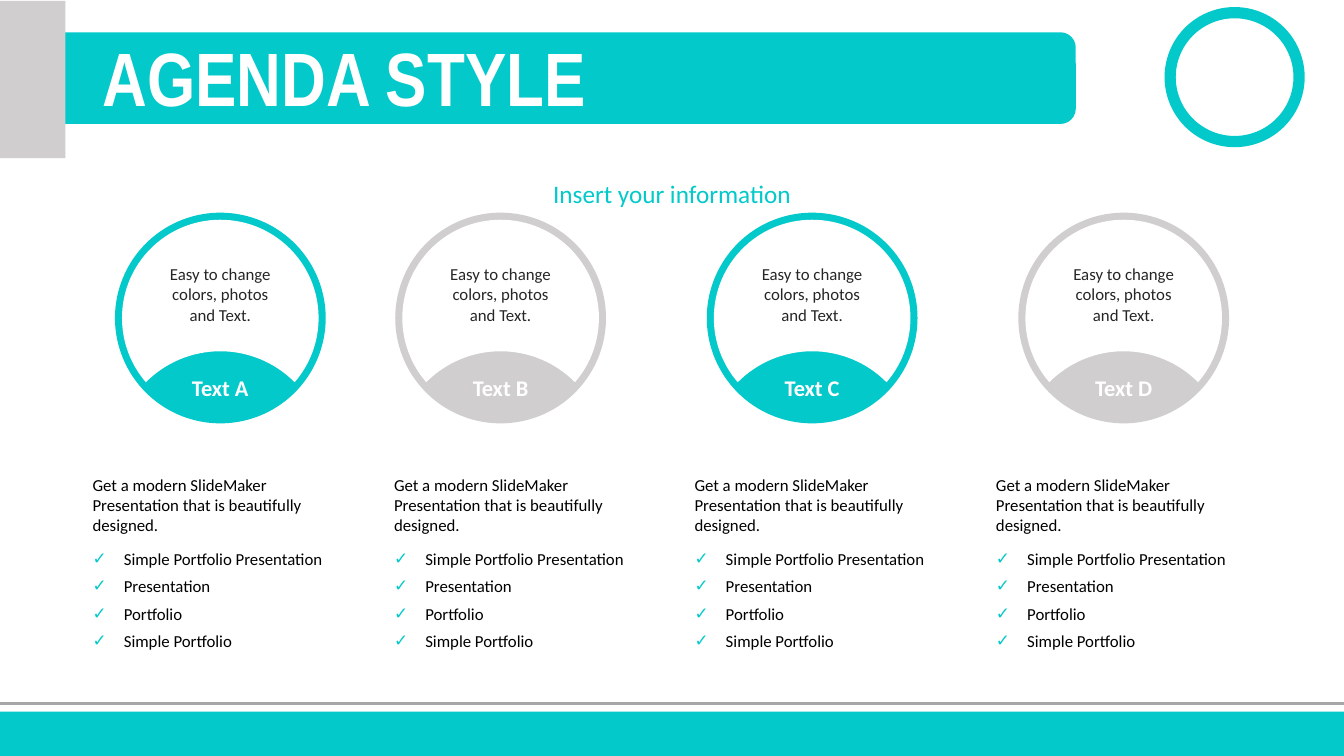
import dataclasses
import math

import lxml.etree
import pptx
import pptx.dml.color
import pptx.enum.shapes
import pptx.enum.text
import pptx.oxml.ns
import pptx.shapes.autoshape
import pptx.util

SHAPE = pptx.enum.shapes.MSO_SHAPE
ALIGN = pptx.enum.text.PP_ALIGN
ANCHOR = pptx.enum.text.MSO_ANCHOR
TAG = pptx.oxml.ns.qn
PX = 9144  # EMU per px, 100 px to the inch
SLIDE_W, SLIDE_H = 1333, 750


@dataclasses.dataclass(frozen=True)
class Theme:
    teal: str = "03C9CA"
    grey: str = "D0CECE"
    rule: str = "A6A6A6"
    white: str = "FFFFFF"
    dark: str = "262626"
    black: str = "000000"
    heading_font: str = "Arial Narrow"
    body_font: str = "Calibri"
    title_size: int = 54
    subtitle_size: int = 18
    label_size: int = 16
    body_size: int = 12


THEME = Theme()


@dataclasses.dataclass(frozen=True)
class Box:
    left: int
    top: int
    width: int
    height: int

    def emu(self) -> tuple[int, ...]:
        return tuple(side * PX for side in (self.left, self.top, self.width, self.height))


@dataclasses.dataclass(frozen=True)
class Dial:
    left: int
    label: str
    color: str


DIALS = [
    Dial(114, "Text A", THEME.teal),
    Dial(392, "Text B", THEME.grey),
    Dial(701, "Text C", THEME.teal),
    Dial(1010, "Text D", THEME.grey),
]
DIAL_TOP, DIAL_SIZE = 211, 209
CAPTION = "Easy to change colors, photos and Text."
INTRO = "Get a modern SlideMaker Presentation that is beautifully designed."
ITEMS = ["Simple Portfolio Presentation", "Presentation", "Portfolio", "Simple Portfolio"]


def rgb(color: str) -> pptx.dml.color.RGBColor:
    return pptx.dml.color.RGBColor.from_string(color)


def paint(shape: pptx.shapes.autoshape.Shape, color: str) -> None:
    shape.shadow.inherit = False
    shape.fill.solid()
    shape.fill.fore_color.rgb = rgb(color)
    shape.line.fill.background()


def add_filled(page, kind: SHAPE, box: Box, color: str) -> pptx.shapes.autoshape.Shape:
    shape = page.shapes.add_shape(kind, *box.emu())
    paint(shape, color)
    return shape


def add_check(para) -> None:
    """Give a paragraph a hanging tick mark."""
    properties = para._p.get_or_add_pPr()
    properties.set("marL", str(31 * PX))
    properties.set("indent", str(-31 * PX))
    tint = lxml.etree.SubElement(properties, TAG("a:buClr"))
    lxml.etree.SubElement(tint, TAG("a:srgbClr"), val=THEME.teal)
    lxml.etree.SubElement(properties, TAG("a:buFont"), typeface=THEME.body_font)
    lxml.etree.SubElement(properties, TAG("a:buChar"), char="✓")


def add_text(page, box: Box, text: str, *, size: int = THEME.body_size,
             color: str = THEME.black, font: str = THEME.body_font, bold: bool = False,
             align: ALIGN = ALIGN.LEFT, anchor: ANCHOR = ANCHOR.TOP,
             checked: bool = False) -> None:
    frame = page.shapes.add_textbox(*box.emu()).text_frame
    frame.word_wrap = True
    frame.auto_size = pptx.enum.text.MSO_AUTO_SIZE.SHAPE_TO_FIT_TEXT
    frame.vertical_anchor = anchor
    para = frame.paragraphs[0]
    para.alignment = align
    if checked:
        para.line_spacing = 0.8
        add_check(para)
    span = para.add_run()
    span.text = text
    span.font.size = pptx.util.Pt(size)
    span.font.name = font
    span.font.bold = bold
    span.font.color.rgb = rgb(color)


def arc(center: tuple[float, float], radius: float, start: float,
        end: float) -> list[tuple[int, int]]:
    """Two control points and the end point of a cubic circular arc."""
    reach = 4 / 3 * math.tan((end - start) / 4)
    offsets = [
        (math.cos(start) - reach * math.sin(start), math.sin(start) + reach * math.cos(start)),
        (math.cos(end) + reach * math.sin(end), math.sin(end) - reach * math.cos(end)),
        (math.cos(end), math.sin(end)),
    ]
    return [(round((center[0] + radius * x) * PX), round((center[1] + radius * y) * PX))
            for x, y in offsets]


def curve_segments(shape: pptx.shapes.autoshape.Shape) -> None:
    """Join each three straight segments of the outline into one cubic."""
    lines = list(shape._element.iter(TAG("a:lnTo")))
    for first, second, third in zip(lines[::3], lines[1::3], lines[2::3]):
        first.tag = TAG("a:cubicBezTo")
        for line in (second, third):
            first.append(line[0])
            line.getparent().remove(line)


def add_dial_face(page, center_x: float, center_y: float) -> None:
    """White disc whose foot is cut away by a second circle below it."""
    radius, bite_radius, drop = 97.5, 104, 137
    cut_y = (radius ** 2 - bite_radius ** 2 + drop ** 2) / (2 * drop)
    rim = math.asin(cut_y / radius)
    bite = math.asin((drop - cut_y) / bite_radius)
    disc, foot = (center_x, center_y), (center_x, center_y + drop)
    rim_stops = [math.pi - rim, math.pi, 1.5 * math.pi, 2 * math.pi, 2 * math.pi + rim]
    bite_stops = [-bite, -math.pi / 2, bite - math.pi]
    points = []
    for center, size, stops in ((disc, radius, rim_stops), (foot, bite_radius, bite_stops)):
        for start, end in zip(stops, stops[1:]):
            points += arc(center, size, start, end)
    builder = page.shapes.build_freeform(*points[-1])
    builder.add_line_segments(points, close=True)
    face = builder.convert_to_shape()
    curve_segments(face)
    paint(face, THEME.white)


def add_dial(page, dial: Dial) -> None:
    add_filled(page, SHAPE.OVAL, Box(dial.left, DIAL_TOP, DIAL_SIZE, DIAL_SIZE), dial.color)
    add_dial_face(page, dial.left + DIAL_SIZE / 2, DIAL_TOP + DIAL_SIZE / 2)
    add_text(page, Box(dial.left + 49, 366, 111, 37), dial.label, size=THEME.label_size,
             color=THEME.white, bold=True, align=ALIGN.CENTER)
    add_text(page, Box(dial.left + 36, 257, 137, 71), CAPTION,
             color=THEME.dark, align=ALIGN.CENTER)


def add_details(page, left: int) -> None:
    add_text(page, Box(left, 466, 273, 71), INTRO)
    for row, item in enumerate(ITEMS):
        add_text(page, Box(left, 543 + row * 27, 273, 27), item,
                 anchor=ANCHOR.MIDDLE, checked=True)


def add_frame(page) -> None:
    # Header band and side tab
    add_filled(page, SHAPE.ROUNDED_RECTANGLE, Box(40, 32, 1027, 91), THEME.teal)
    add_filled(page, SHAPE.RECTANGLE, Box(0, 1, 65, 156), THEME.grey)
    # Footer rule and band
    rule = page.shapes.add_connector(pptx.enum.shapes.MSO_CONNECTOR.STRAIGHT,
                                     0, 698 * PX, SLIDE_W * PX, 698 * PX)
    rule.line.color.rgb = rgb(THEME.rule)
    rule.line.width = pptx.util.Pt(2)
    lxml.etree.SubElement(rule._element.spPr, TAG("a:effectLst"))
    add_filled(page, SHAPE.RECTANGLE, Box(0, 706, SLIDE_W, SLIDE_H - 706), THEME.teal)
    # Plain badge
    badge = add_filled(page, SHAPE.DONUT, Box(1155, 7, 139, 139), THEME.teal)
    badge.adjustments[0] = 0.08


def main() -> None:
    deck = pptx.Presentation()
    deck.slide_width, deck.slide_height = SLIDE_W * PX, SLIDE_H * PX
    page = deck.slides.add_slide(deck.slide_layouts[6])
    add_frame(page)
    # Dials and the columns below them
    for column, dial in enumerate(DIALS):
        add_dial(page, dial)
        add_details(page, 82 + round(column * 896 / 3))
    # Headings
    add_text(page, Box(92, 25, 624, 101), "AGENDA STYLE", size=THEME.title_size,
             color=THEME.white, font=THEME.heading_font, bold=True, anchor=ANCHOR.MIDDLE)
    add_text(page, Box(368, 172, 597, 40), "Insert your information",
             size=THEME.subtitle_size, color=THEME.teal, align=ALIGN.CENTER)
    deck.save("out.pptx")


if __name__ == "__main__":
    main()
